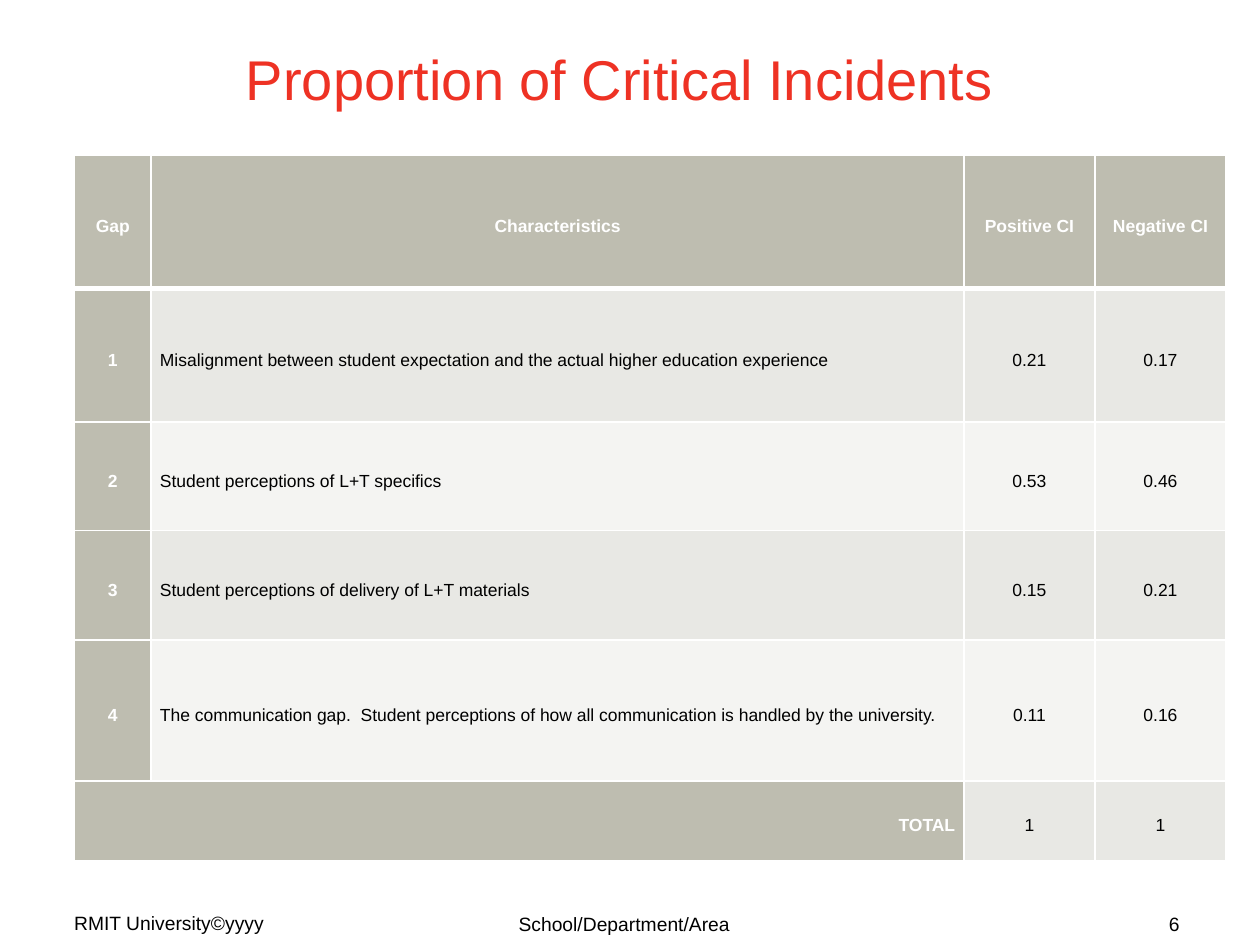
"""Build the slide on the proportion of critical incidents."""
from lxml.etree import SubElement
from pptx import Presentation
from pptx.dml.color import RGBColor
from pptx.enum.text import MSO_ANCHOR, PP_ALIGN
from pptx.oxml.ns import qn
from pptx.util import Inches, Pt

HUES = {
    "red": "EE3224", "black": "000000", "white": "FFFFFF",
    "head": "BEBDB0", "odd": "E8E8E4", "even": "F4F4F2",
}
LEFT, MID, RIGHT = PP_ALIGN.LEFT, PP_ALIGN.CENTER, PP_ALIGN.RIGHT


def style(frame, text, size, hue, align, bold=False):
    frame.text = text
    para = frame.paragraphs[0]
    para.alignment = align
    for run in para.runs:
        font = run.font
        font.name, font.size, font.bold = "Arial", Pt(size), bold
        font.color.rgb = RGBColor.from_string(HUES[hue])
    return para


def edge(cell, side, width):
    line = SubElement(cell._tc.get_or_add_tcPr(), qn(f"a:ln{side}"), w=str(Pt(width)))
    fill = SubElement(line, qn("a:solidFill"))
    SubElement(fill, qn("a:srgbClr"), val=HUES["white"])


deck = Presentation()
deck.slide_width, deck.slide_height = Inches(10), Inches(7.5)
slide = deck.slides.add_slide(deck.slide_layouts[6])

labels = [
    ("Proportion of Critical Incidents", 0.42, 0.3, 9, 1.01, 32, "red", MID),
    ("RMIT University©yyyy", 0.49, 7.18, 2.33, 0.24, 11, "black", LEFT),
    ("School/Department/Area", 2.86, 7.19, 4.19, 0.24, 11, "black", MID),
    ("6", 7.13, 7.19, 2.33, 0.24, 11, "black", RIGHT),
]
for text, left, top, width, height, size, hue, align in labels:
    box = slide.shapes.add_textbox(Inches(left), Inches(top), Inches(width), Inches(height))
    box.text_frame.word_wrap = True
    style(box.text_frame, text, size, hue, align)

rows = [
    ("Gap", "Characteristics", "Positive CI", "Negative CI"),
    ("1", "Misalignment between student expectation and the actual higher education experience", "0.21", "0.17"),
    ("2", "Student perceptions of L+T specifics", "0.53", "0.46"),
    ("3", "Student perceptions of delivery of L+T materials", "0.15", "0.21"),
    ("4", "The communication gap.  Student perceptions of how all communication is handled by the university.", "0.11", "0.16"),
    ("TOTAL", "", "1", "1"),
]
widths = [0.61, 6.45, 1.04, 1.04]
heights = [1.06, 1.06, 0.86, 0.87, 1.12, 0.63]
last = len(rows) - 1
table = slide.shapes.add_table(
    len(rows), len(widths), Inches(0.59), Inches(1.23),
    Inches(sum(widths)), Inches(sum(heights))).table
for col, width in zip(table.columns, widths):
    col.width = Inches(width)
for row, height in zip(table.rows, heights):
    row.height = Inches(height)
table.cell(last, 0).merge(table.cell(last, 1))

for r, row in enumerate(rows):
    for c, text in enumerate(row):
        cell = table.cell(r, c)
        head = r == 0 or c == 0 or cell.is_spanned
        for side in "LRTB":
            thick = (side == "B" and r == 0) or (side == "T" and r == 1)
            edge(cell, side, 3 if thick else 1)
        cell.fill.solid()
        band = "head" if head else "odd" if r % 2 else "even"
        cell.fill.fore_color.rgb = RGBColor.from_string(HUES[band])
        cell.vertical_anchor = MSO_ANCHOR.MIDDLE
        cell.margin_left = cell.margin_right = Inches(0.07)
        cell.margin_top = cell.margin_bottom = 0
        if cell.is_spanned:
            continue
        align = RIGHT if cell.is_merge_origin else LEFT if c == 1 and r else MID
        para = style(cell.text_frame, text, 10, "white" if head else "black", align, head)
        para.line_spacing = 1.5

# Total row keeps the odd tint
for c in (2, 3):
    table.cell(last, c).fill.fore_color.rgb = RGBColor.from_string(HUES["odd"])

deck.save("out.pptx")
